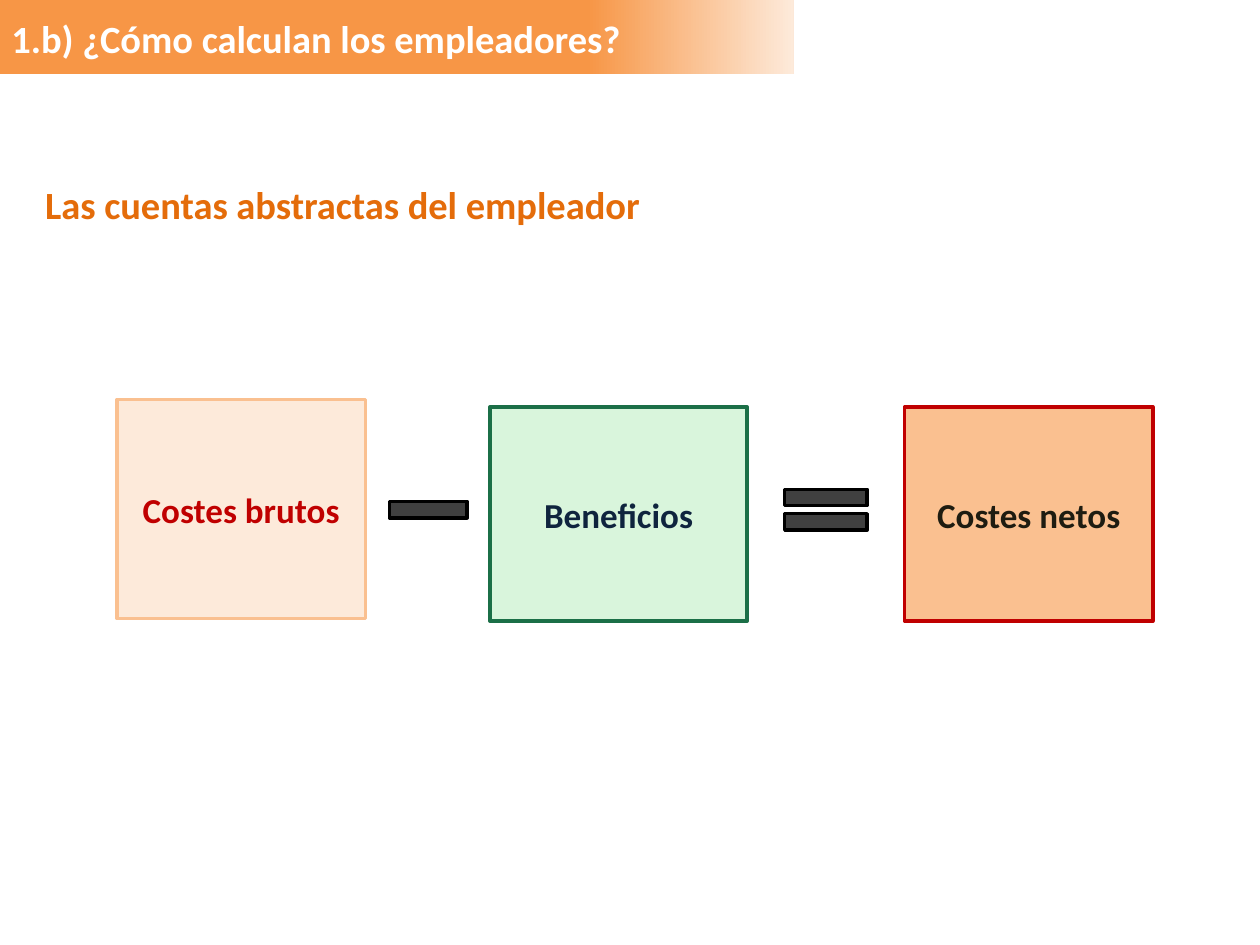
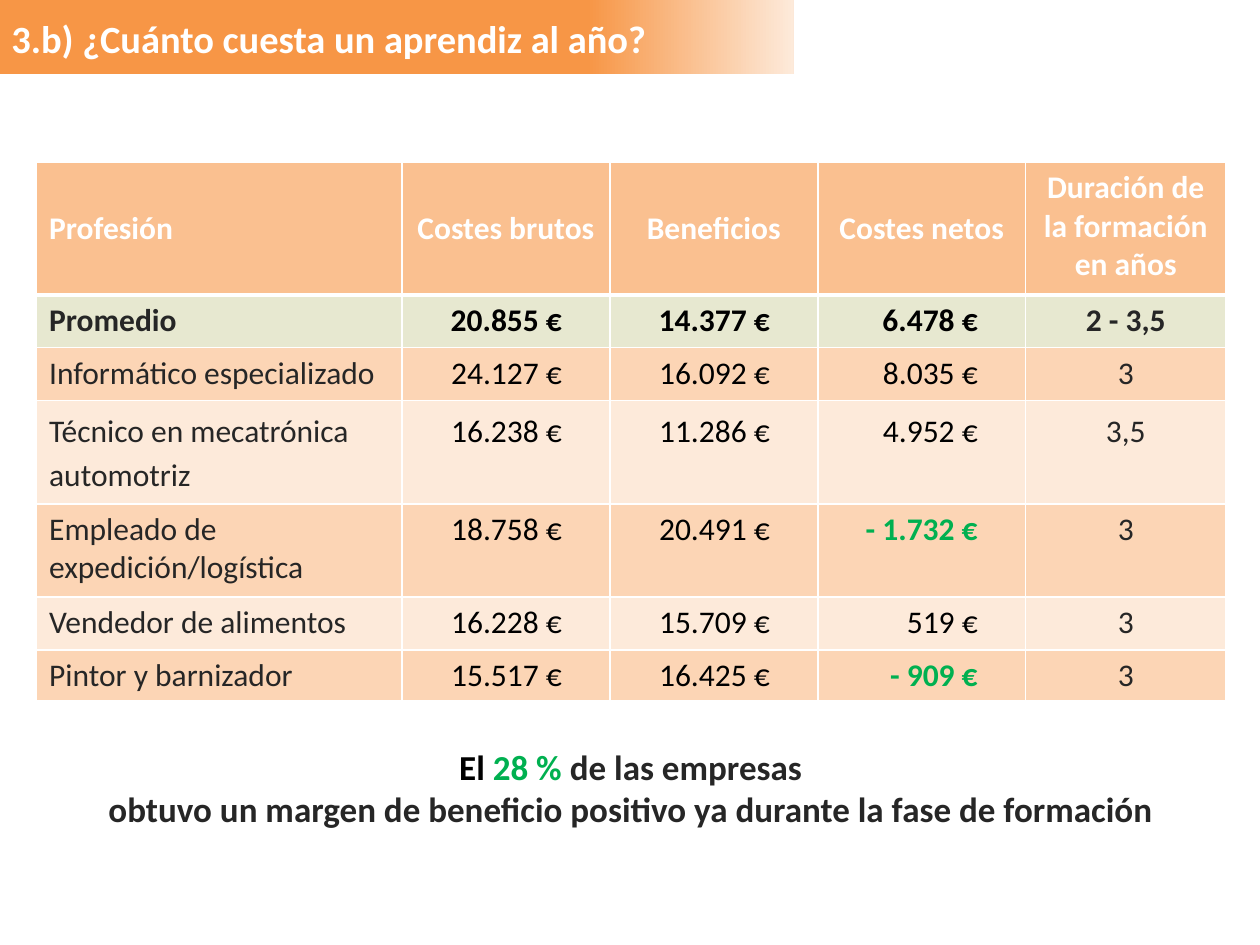
from pptx import Presentation
from pptx.dml.color import RGBColor as RGB
from pptx.enum.shapes import MSO_SHAPE as Kind
from pptx.enum.text import MSO_ANCHOR as Anchor, MSO_AUTO_SIZE as Auto, PP_ALIGN as Align
from pptx.oxml import parse_xml
from pptx.oxml.ns import nsdecls
from pptx.util import Inches, Pt

FONT = "Calibri"
COLORS = {
    "white": "FFFFFF", "black": "000000", "ink": "262626", "gray": "404040",
    "orange": "F79646", "deep": "E46C0A", "peach": "FAC090", "sand": "FCD5B5",
    "cream": "FDEADA", "red": "C00000", "green": "00B050", "mint": "D9F5DC",
    "pine": "1B6F47", "navy": "0F243E", "bark": "1E1C11", "sage": "E7E8D0",
}
COLS = [2.9, 1.65, 1.65, 1.65, 1.59]
ROWS = [1.05, 0.42, 0.42, 0.82, 0.74, 0.42, 0.4]
HEAD = ["Profesión", "Costes brutos", "Beneficios", "Costes netos",
        "Duración de la formación en años"]
JOBS = [
    ["Promedio", "20.855 €", "14.377 €", "6.478 €", "2 - 3,5"],
    ["Informático especializado", "24.127 €", "16.092 €", "8.035 €", "3"],
    ["Técnico en mecatrónica automotriz", "16.238 €", "11.286 €", "4.952 €", "3,5"],
    ["Empleado de expedición/logística", "18.758 €", "20.491 €", "- 1.732 €", "3"],
    ["Vendedor de alimentos", "16.228 €", "15.709 €", "519 €", "3"],
    ["Pintor y barnizador", "15.517 €", "16.425 €", "- 909 €", "3"],
]


def rgb(name):
    return RGB.from_string(COLORS[name])


def place(box):
    return [Inches(n) for n in box]


def add_run(para, text, size, color, bold=True):
    run = para.add_run()
    run.text = text
    font = run.font
    font.name, font.size, font.bold = FONT, Pt(size), bold
    font.color.rgb = rgb(color)


def add_text(slide, box, lines, size, align=Align.LEFT):
    """Each line is a list of (text, color) runs."""
    frame = slide.shapes.add_textbox(*place(box)).text_frame
    frame.word_wrap = True
    for i, line in enumerate(lines):
        para = frame.paragraphs[0] if i == 0 else frame.add_paragraph()
        para.alignment = align
        for text, color in line:
            add_run(para, text, size, color)


def add_form(slide, kind, box, fill, line):
    form = slide.shapes.add_shape(kind, *place(box))
    form.shadow.inherit = False
    form.fill.solid()
    form.fill.fore_color.rgb = rgb(fill)
    form.line.color.rgb = rgb(line)
    form.line.width = Pt(2)
    return form


def add_card(slide, box, text, fill, line, color):
    frame = add_form(slide, Kind.RECTANGLE, box, fill, line).text_frame
    frame.word_wrap = True
    frame.vertical_anchor = Anchor.MIDDLE
    para = frame.paragraphs[0]
    para.alignment = Align.CENTER
    add_run(para, text, 20, color)


def add_band(slide):
    band = slide.shapes.add_shape(Kind.RECTANGLE, *place((0, 0, 6.3, 0.59)))
    band.shadow.inherit = False
    band.line.fill.background()
    band.fill.gradient()
    band.fill.gradient_angle = 0
    stops = zip(band.fill.gradient_stops, [("orange", 0.74), ("cream", 1)])
    for stop, (color, pos) in stops:
        stop.color.rgb = rgb(color)
        stop.position = pos
    return band


def add_page(deck, text):
    slide = deck.slides.add_slide(deck.slide_layouts[5])
    title = slide.shapes.title
    title.left, title.top, title.width, title.height = place((-0.01, 0.07, 6.31, 0.47))
    frame = title.text_frame
    frame.word_wrap = True
    frame.auto_size = Auto.NONE
    frame.vertical_anchor = Anchor.TOP
    para = frame.paragraphs[0]
    para.alignment = Align.LEFT
    add_run(para, text, 22, "white")
    # The band lies behind the title
    title.element.addprevious(add_band(slide).element)
    return slide


def set_edges(cell, top, bottom):
    props = cell._tc.get_or_add_tcPr()
    for side, width in (("L", 1), ("R", 1), ("T", top), ("B", bottom)):
        props.append(parse_xml(
            f'<a:ln{side} {nsdecls("a")} w="{Pt(width)}"><a:solidFill>'
            f'<a:srgbClr val="{COLORS["white"]}"/></a:solidFill></a:ln{side}>'))


def fill_cell(cell, text, row, col):
    set_edges(cell, 3 if row == 1 else 1, 3 if row == 0 else 1)
    cell.fill.solid()
    fill = {0: "peach", 1: "sage"}.get(row, "cream" if row % 2 else "sand")
    cell.fill.fore_color.rgb = rgb(fill)
    para = cell.text_frame.paragraphs[0]
    money = 1 <= col <= 3
    para.alignment = Align.LEFT if col == 0 else Align.CENTER
    if row == 0:
        cell.vertical_anchor = Anchor.TOP if col == 4 else Anchor.MIDDLE
        color = "white"
    else:
        color = "black" if money else "ink"
        if money:
            para.alignment = Align.RIGHT
            cell.margin_right = Inches(0.38)
    if row == 3:
        para.line_spacing = 1.15
        para.space_after = Pt(10)
    gain = text.startswith("-")
    add_run(para, text, 18, "green" if gain else color, row < 2 or gain)


def add_grid(slide, spot, rows):
    box = (*spot, sum(COLS), sum(ROWS))
    grid = slide.shapes.add_table(len(ROWS), len(COLS), *place(box)).table
    grid.horz_banding = False
    for col, width in zip(grid.columns, COLS):
        col.width = Inches(width)
    for row, height in zip(grid.rows, ROWS):
        row.height = Inches(height)
    for r, texts in enumerate(rows):
        for c, text in enumerate(texts):
            fill_cell(grid.cell(r, c), text, r, c)


def main():
    deck = Presentation()
    deck.slide_width, deck.slide_height = Inches(10), Inches(7.5)

    # Gross costs minus benefits equals net costs
    slide = add_page(deck, "1.b) ¿Cómo calculan los empleadores?")
    add_text(slide, (0.26, 1.39, 5.61, 0.47),
             [[("Las cuentas abstractas del empleador", "deep")]], 22)
    add_card(slide, (0.93, 3.17, 1.97, 1.74), "Costes brutos", "cream", "peach", "red")
    add_card(slide, (3.89, 3.23, 2.04, 1.7), "Beneficios", "mint", "pine", "navy")
    add_card(slide, (7.18, 3.23, 1.97, 1.7), "Costes netos", "peach", "red", "bark")
    add_form(slide, Kind.MATH_MINUS, (2.98, 3.77, 0.84, 0.55), "gray", "black")
    add_form(slide, Kind.MATH_EQUAL, (6.11, 3.77, 0.89, 0.55), "gray", "black")

    # Yearly cost by trade
    slide = add_page(deck, "3.b) ¿Cuánto cuesta un aprendiz al año?")
    add_text(slide, (0.28, 5.87, 9.45, 1.11), [
        [("El ", "black"), ("28 %", "green"), (" de las empresas", "ink")],
        [("obtuvo un margen de beneficio positivo ya durante la fase de formación", "ink")],
    ], 20, Align.CENTER)
    add_grid(slide, (0.29, 1.29), [HEAD, *JOBS])

    deck.save("out.pptx")


if __name__ == "__main__":
    main()
